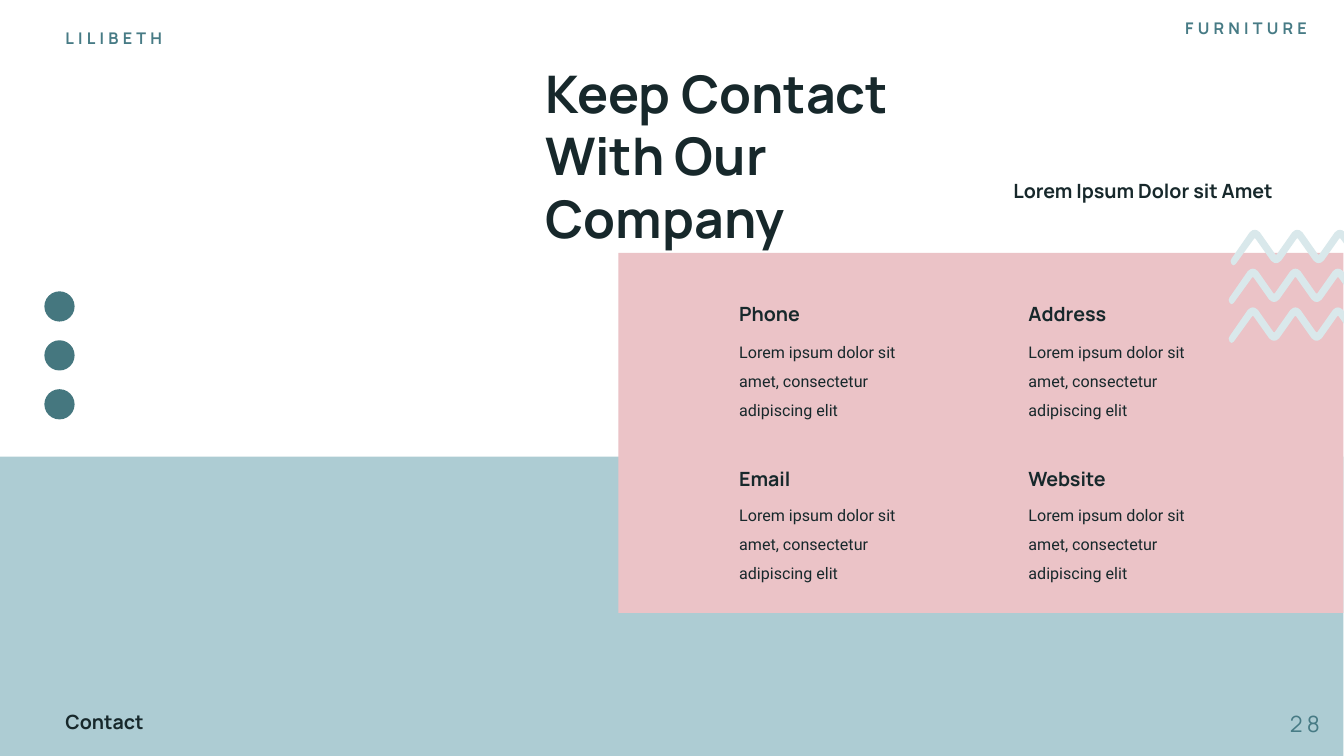
from dataclasses import dataclass

from pptx import Presentation
from pptx.dml.color import RGBColor as RGB
from pptx.enum.shapes import MSO_SHAPE as Kind
from pptx.enum.text import MSO_AUTO_SIZE as Fit
from pptx.util import Pt


@dataclass(frozen=True)
class Theme:
    ink: str = "17282B"
    teal: str = "477B85"
    badge: str = "45777F"
    base: str = "ADCCD3"
    panel: str = "EBC3C7"
    wave: str = "D9E8EB"
    head: str = "Manrope"
    body: str = "Roboto"
    title: int = 74
    page: int = 32
    label: int = 28
    small: int = 23


T = Theme()
LOREM = "Lorem ipsum dolor sit amet, consectetur adipiscing elit"


def paint(shape, color):
    shape.shadow.inherit = False
    shape.fill.solid()
    shape.fill.fore_color.rgb = RGB.from_string(color)
    shape.line.fill.background()


def add_block(slide, kind, box, color):
    paint(slide.shapes.add_shape(kind, *map(Pt, box)), color)


def add_text(slide, text, box, size, color=T.ink, font=T.head,
             bold=True, wrap=False, track=0, lead=None):
    """Add a text box; track is letter spacing in points, lead is line spacing."""
    frame = slide.shapes.add_textbox(*map(Pt, box)).text_frame
    frame.text = text
    frame.word_wrap = wrap
    frame.auto_size = Fit.SHAPE_TO_FIT_TEXT
    for para in frame.paragraphs:
        if lead:
            para.line_spacing = lead
        for run in para.runs:
            run.font.name = font
            run.font.size = Pt(size)
            run.font.bold = bold
            run.font.color.rgb = RGB.from_string(color)
            if track:
                run._r.get_or_add_rPr().set("spc", str(track * 100))


def add_card(slide, name, left, top, gap):
    """Add a contact heading with its text, gap points below the heading's top."""
    add_text(slide, name, (left, top, 132.5, 41), T.label, wrap=True)
    add_text(slide, LOREM, (left, top + gap, 278, 128), T.small,
             font=T.body, bold=False, wrap=True, lead=1.5)


def wave_edge():
    """Return the outline of a zigzag band with rounded bends, from its top left."""
    half, first, width = 30.4, 34.6, 251.4
    wide = [(-7.2, 3.6), (-3.2, 0.6), (0, 0), (3.2, 0.6), (7.2, 3.6)]
    tight = [(-1, 0.4), (0, 0), (1, 0.4)]
    tip = [(7.2, 49), (4.3, 50.8), (1.5, 49), (0, 44.6), (1.5, 41)]
    upper, lower = [], []
    for i in range(7):
        mid = first + i * half
        if i % 2 == 0:
            upper += [(mid + x, y) for x, y in wide]
            lower += [(mid + x, 12.2 + y) for x, y in tight]
        else:
            upper += [(mid + x, 35.6 - y) for x, y in tight]
            lower += [(mid + x, 47.6 - y) for x, y in wide]
    end = [(width - x, y) for x, y in reversed(tip)]
    return tip + upper + end + lower[::-1]


def add_waves(slide):
    group = slide.shapes.add_group_shape()
    for left, top in ((1755.4, 439.2), (1755.4, 383.8), (1758.2, 328.3)):
        dots = [(Pt(left + x), Pt(top + y)) for x, y in wave_edge()]
        path = group.shapes.build_freeform(*dots[0])
        path.add_line_segments(dots[1:], close=True)
        paint(path.convert_to_shape(), T.wave)


def main():
    deck = Presentation()
    deck.slide_width, deck.slide_height = Pt(1920.24), Pt(1080)
    slide = deck.slides.add_slide(deck.slide_layouts[6])

    add_block(slide, Kind.RECTANGLE, (-2.9, 652.3, 1922.4, 431.3), T.base)
    add_block(slide, Kind.RECTANGLE, (883.4, 361.4, 1036.1, 514.1), T.panel)

    add_text(slide, "Contact", (86.4, 1010.2, 129.6, 41), T.label)
    add_text(slide, "LILIBETH", (86.4, 36.7, 160.6, 35.3), T.small, T.teal, track=6)
    add_text(slide, "28", (1836, 1010.2, 78.5, 46), T.page, T.teal,
             bold=False, wrap=True, track=6)
    add_text(slide, "FURNITURE", (1686.2, 22.3, 198, 35.3), T.small, T.teal, track=6)

    for top, gap, names in ((427.7, 43.9, ("Phone", "Address")),
                            (663.8, 41, ("Email", "Website"))):
        for left, name in zip((1049, 1462.3), names):
            add_card(slide, name, left, top, gap)

    add_text(slide, "Lorem Ipsum Dolor sit Amet", (1440.7, 252, 396.7, 41), T.label)
    for i in range(3):
        add_block(slide, Kind.OVAL, (63.4, 416.2 + i * 69.9, 43.2, 43.2), T.badge)
    add_waves(slide)
    add_text(slide, "Keep Contact\nWith Our\nCompany", (772.6, 85, 520.6, 276.5), T.title)

    deck.save("out.pptx")


if __name__ == "__main__":
    main()
